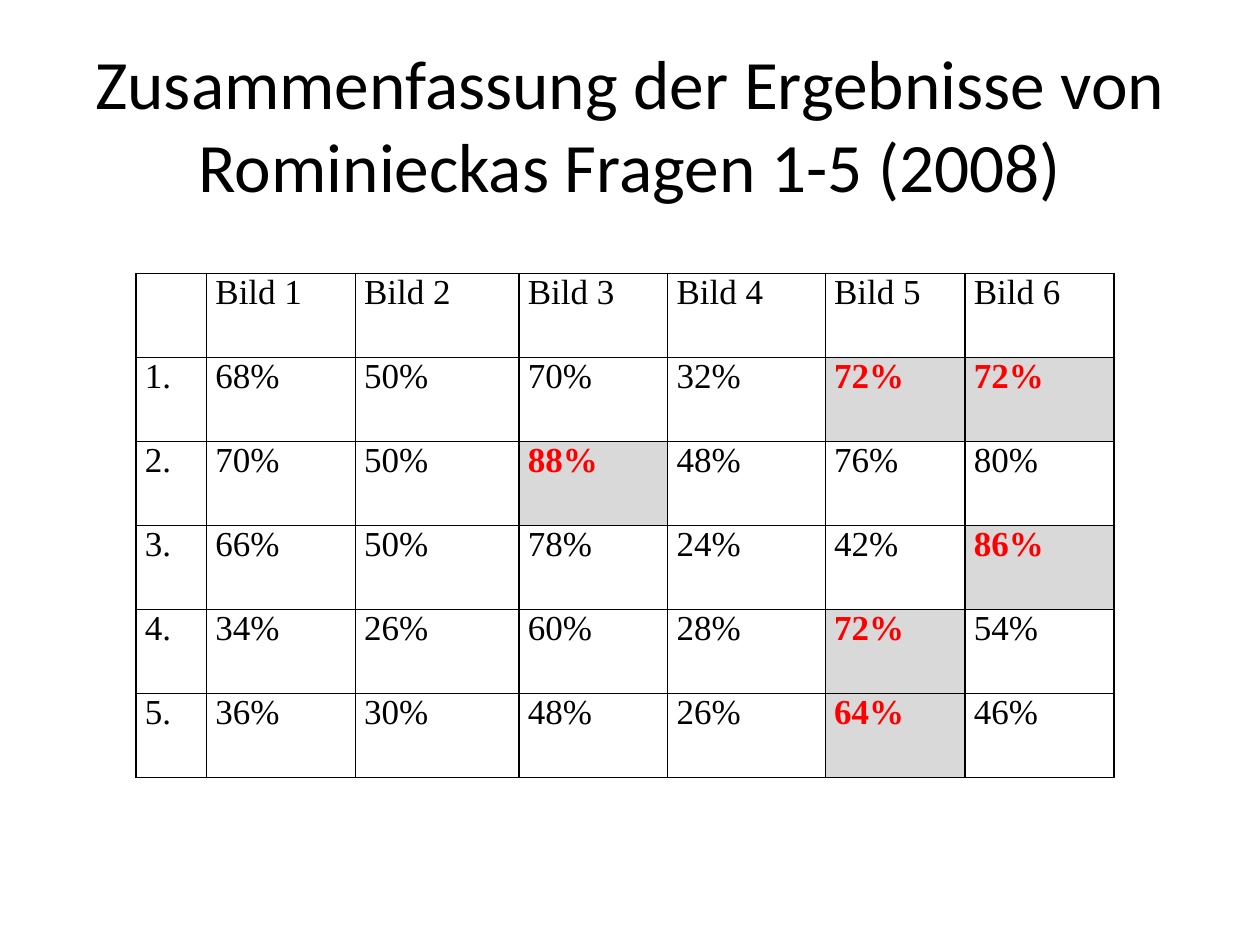
from lxml import etree
from pptx import Presentation
from pptx.dml.color import RGBColor
from pptx.enum import text
from pptx.oxml.ns import qn
from pptx.util import Inches, Pt

# Content: a trailing * marks a highlighted result
TITLE = "Zusammenfassung der Ergebnisse von Rominieckas Fragen 1-5 (2008)"
ROWS = [
    ["", "Bild 1", "Bild 2", "Bild 3", "Bild 4", "Bild 5", "Bild 6"],
    ["1.", "68%", "50%", "70%", "32%", "72%*", "72%*"],
    ["2.", "70%", "50%", "88%*", "48%", "76%", "80%"],
    ["3.", "66%", "50%", "78%", "24%", "42%", "86%*"],
    ["4.", "34%", "26%", "60%", "28%", "72%*", "54%"],
    ["5.", "36%", "30%", "48%", "26%", "64%*", "46%"],
]
WIDTHS = [0.56, 1.18, 1.3, 1.18, 1.25, 1.11, 1.18]
HEIGHT = 4 / len(ROWS)
COLORS = {"ink": "000000", "mark": "FF0000", "shade": "D9D9D9", "paper": "FFFFFF"}


def write(frame, words, font, size, color="ink", bold=False, align="LEFT"):
    para = frame.paragraphs[0]
    para.alignment = getattr(text.PP_ALIGN, align)
    run = para.add_run()
    run.text = words
    run.font.name = font
    run.font.size = Pt(size)
    run.font.bold = bold
    run.font.color.rgb = RGBColor.from_string(COLORS[color])


def border(cell):
    props = cell._tc.get_or_add_tcPr()
    for spot, side in enumerate(("lnL", "lnR", "lnT", "lnB")):
        line = etree.Element(qn("a:" + side), w=str(Pt(1)))
        fill = etree.SubElement(line, qn("a:solidFill"))
        etree.SubElement(fill, qn("a:srgbClr"), val=COLORS["ink"])
        props.insert(spot, line)  # borders come before the fill


prs = Presentation()
prs.slide_width, prs.slide_height = Inches(10), Inches(7.5)
slide = prs.slides.add_slide(prs.slide_layouts[6])

# Title
box = slide.shapes.add_textbox(Inches(0.5), Inches(0.35), Inches(9), Inches(1.25))
frame = box.text_frame
frame.word_wrap = True
frame.vertical_anchor = text.MSO_ANCHOR.MIDDLE
write(frame, TITLE, "Calibri", 39.6, align="CENTER")

# Results table
table = slide.shapes.add_table(
    len(ROWS), len(WIDTHS), Inches(1.08), Inches(2.17),
    Inches(sum(WIDTHS)), Inches(HEIGHT * len(ROWS))).table
table.first_row = table.horz_banding = False
for col, width in zip(table.columns, WIDTHS):
    col.width = Inches(width)
for row, words in zip(table.rows, ROWS):
    row.height = Inches(HEIGHT)
    for cell, word in zip(row.cells, words):
        top = word.endswith("*")
        cell.margin_left = cell.margin_right = Inches(0.07)
        cell.margin_top = cell.margin_bottom = 0
        cell.fill.solid()
        cell.fill.fore_color.rgb = RGBColor.from_string(
            COLORS["shade" if top else "paper"])
        border(cell)
        if word:
            write(cell.text_frame, word.rstrip("*"), "Times New Roman", 20,
                  color="mark" if top else "ink", bold=top, align="JUSTIFY")

prs.save("out.pptx")
